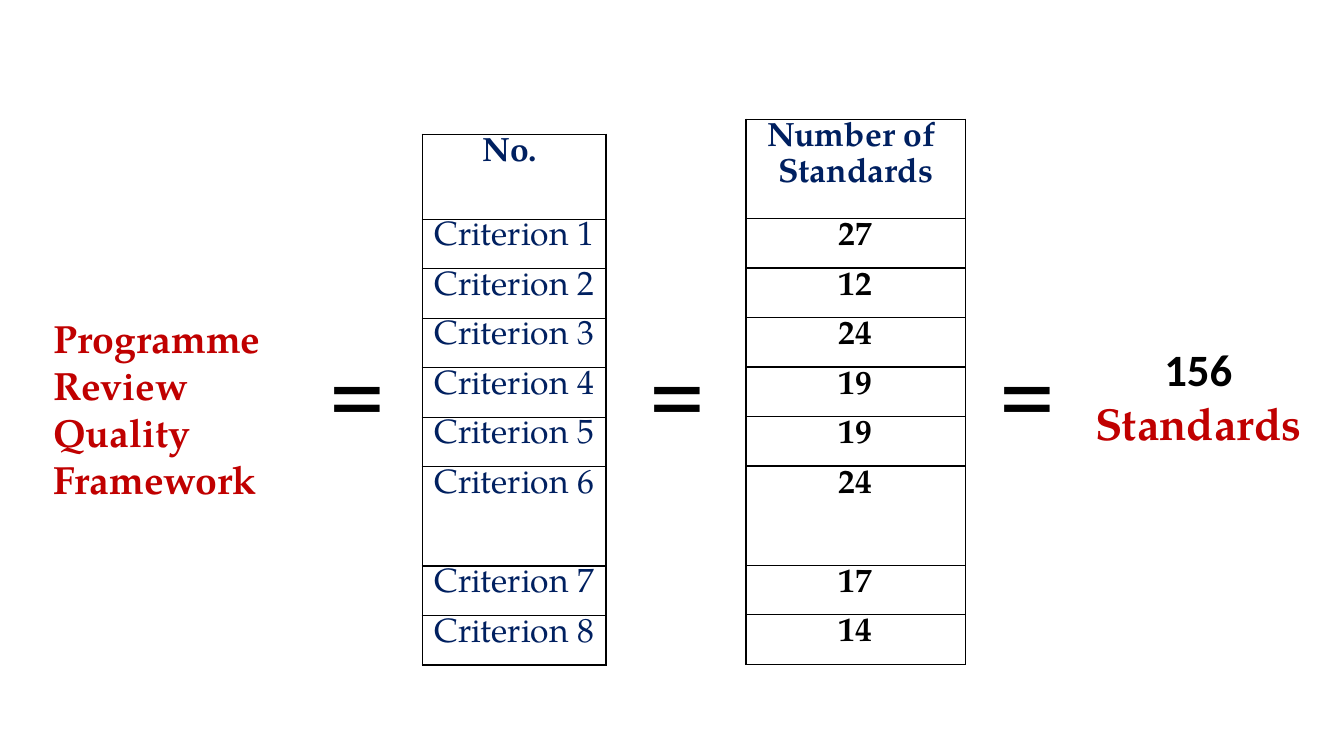
from lxml.etree import SubElement
from pptx import Presentation
from pptx.dml.color import RGBColor
from pptx.enum.text import MSO_AUTO_SIZE, PP_ALIGN
from pptx.oxml.ns import qn
from pptx.util import Pt

SERIF, SANS = "TeX Gyre Pagella", "Calibri"
NAVY, RED, BLACK = "002060", "C00000", "000000"
ROW = 35.4
COUNTS = [27, 12, 24, 19, 19, 24, 17, 14]


def style(para, face, size, color, bold=False):
    font = para.font
    font.name, font.size, font.bold = face, Pt(size), bold
    font.color.rgb = RGBColor.from_string(color)


def add_text(slide, left, top, width, height, lines, align=PP_ALIGN.LEFT):
    """Each line is a tuple of text, face, size, colour and bold."""
    box = slide.shapes.add_textbox(Pt(left), Pt(top), Pt(width), Pt(height))
    frame = box.text_frame
    frame.word_wrap = True
    frame.auto_size = MSO_AUTO_SIZE.SHAPE_TO_FIT_TEXT
    for i, (text, *look) in enumerate(lines):
        para = frame.add_paragraph() if i else frame.paragraphs[0]
        para.text = text
        para.alignment = align
        style(para, *look)


def add_borders(cell):
    props = cell._tc.get_or_add_tcPr()
    for i, side in enumerate(("lnL", "lnR", "lnT", "lnB")):
        line = props.makeelement(qn(f"a:{side}"), {"w": str(Pt(1))})
        fill = SubElement(line, qn("a:solidFill"))
        SubElement(fill, qn("a:srgbClr"), val=BLACK)
        props.insert(i, line)


def fill_cell(cell, text, color, bold):
    cell.fill.background()
    cell.margin_left = cell.margin_right = Pt(5)
    cell.margin_top = cell.margin_bottom = 0
    cell.text = text
    for para in cell.text_frame.paragraphs:
        para.alignment = PP_ALIGN.CENTER
        para.line_spacing = Pt(25.7)
        style(para, SERIF, 24, color, bold)
    add_borders(cell)


def add_column(slide, left, top, width, head, title, items, color, bold):
    """One-column table; the sixth item has a row of double height."""
    rows = [head] + [ROW * (2 if i == 5 else 1) for i in range(len(items))]
    frame = slide.shapes.add_table(
        len(rows), 1, Pt(left), Pt(top), Pt(width), Pt(sum(rows)))
    table = frame.table
    table.horz_banding = table.first_row = False
    for i, height in enumerate(rows):
        table.rows[i].height = Pt(height)
    fill_cell(table.cell(0, 0), title, NAVY, True)
    for i, item in enumerate(items, 1):
        fill_cell(table.cell(i, 0), item, color, bold)


def main():
    deck = Presentation()
    deck.slide_width, deck.slide_height = Pt(960), Pt(540)
    slide = deck.slides.add_slide(deck.slide_layouts[6])

    add_column(slide, 532.8, 85.2, 156.6, 2 * ROW, "Number of \nStandards",
               [str(n) for n in COUNTS], BLACK, True)
    add_column(slide, 301.6, 95.8, 131.2, 60.8, "No. ",
               [f"Criterion {i}" for i in range(1, 9)], NAVY, False)

    add_text(slide, 31, 221, 204.5, 143.3,
             [("Programme Review Quality Framework", SERIF, 28, RED, True)])
    for left in (228.2, 457.2, 707):
        add_text(slide, left, 227.3, 64.8, 104.4,
                 [("=", SANS, 80, BLACK, False)])
    add_text(slide, 771.8, 240.5, 168.5, 123.8,
             [("156", SANS, 32, BLACK, True),
              ("Standards", SERIF, 32, RED, True)], PP_ALIGN.CENTER)
    deck.save("out.pptx")


if __name__ == "__main__":
    main()
